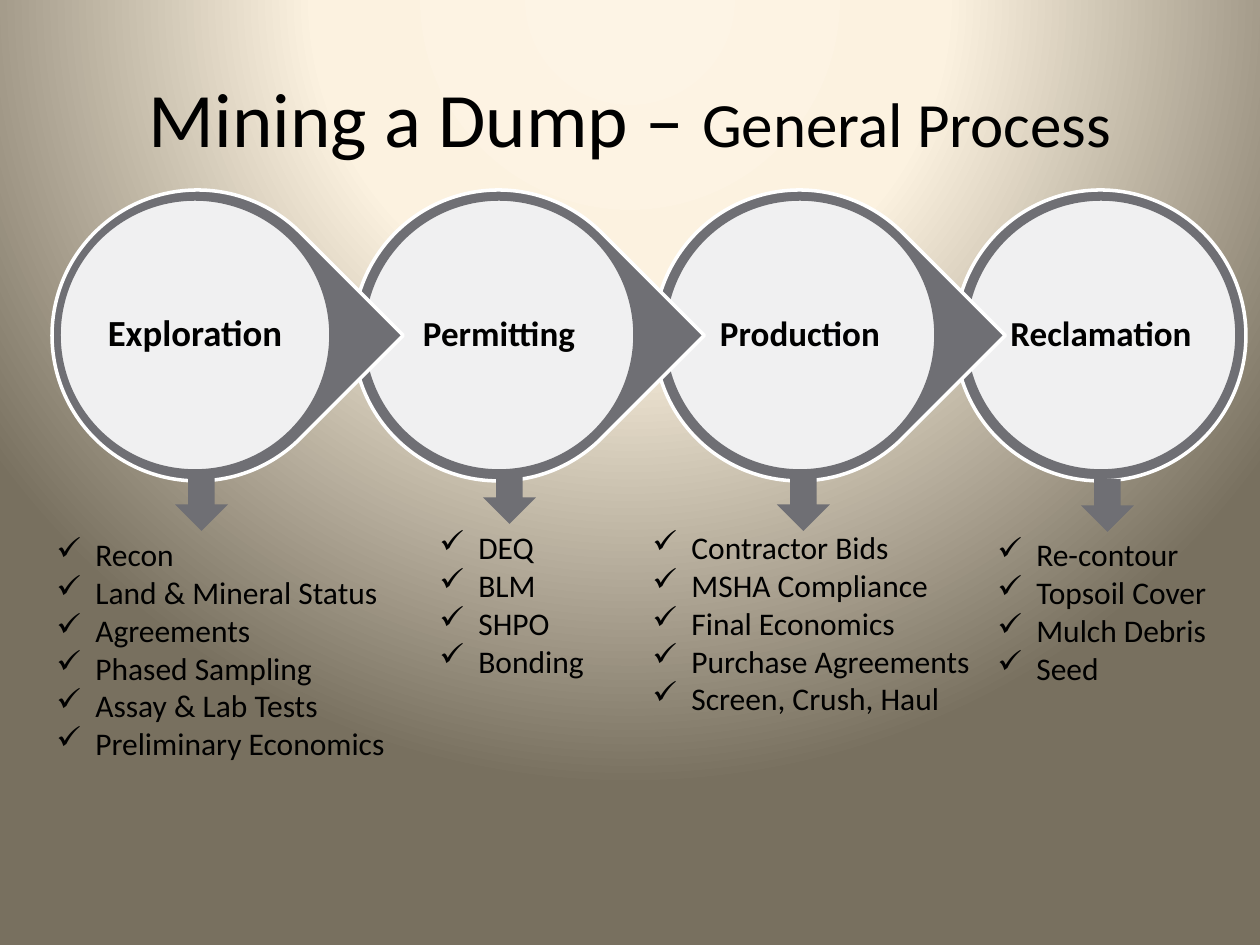
from lxml.etree import SubElement
from pptx import Presentation
from pptx.dml.color import RGBColor
from pptx.enum.shapes import MSO_SHAPE as Shape
from pptx.enum.text import MSO_ANCHOR as Anchor, PP_ALIGN as Align
from pptx.oxml.ns import qn
from pptx.util import Pt

TITLE = [("Mining a Dump – ", 44), ("General Process", 36)]
# face: left of the pale disc; arrow: left, top; notes: left, top, width, height
STAGES = [
    dict(name="Exploration", size=21, face=59, arrow=(175, 478), notes=(44, 529, 368, 318),
         steps=["Recon", "Land & Mineral Status", "Agreements", "Phased Sampling",
                "Assay & Lab Tests", "Preliminary Economics"]),
    dict(name="Permitting", size=20, face=363, arrow=(483, 471), notes=(427, 522, 262, 204),
         steps=["DEQ", "BLM", "SHPO", "Bonding"]),
    dict(name="Production", size=20, face=664, arrow=(777, 478), notes=(640, 522, 349, 204),
         steps=["Contractor Bids", "MSHA Compliance", "Final Economics",
                "Purchase Agreements", "Screen, Crush, Haul"]),
    dict(name="Reclamation", size=20, face=965, arrow=(1081, 479), notes=(985, 529, 262, 165),
         steps=["Re-contour", "Topsoil Cover", "Mulch Debris", "Seed"]),
]
GRAY, WHITE, BLACK = "6F6F74", "FFFFFF", "000000"
GLOW = [(0, "FDF4E5"), (40, "FCF2E0"), (100, "78705F")]
RING_LEFT, RING_TOP, RING, PITCH = 52, 190, 291, 301
FACE_TOP, FACE, LABEL = 199, 272, 194
ARROW = 53


def px(n):
    return round(n * 914400 / 126)


def color(hex_code):
    return RGBColor.from_string(hex_code)


def paint_glow(slide):
    """Radial background gradient centred above the top edge."""
    slide.background.fill.solid()
    bg = slide.element.find(".//" + qn("p:bgPr"))
    bg.remove(bg[0])
    grad = bg.makeelement(qn("a:gradFill"), {"rotWithShape": "1"})
    bg.insert(0, grad)
    stops = SubElement(grad, qn("a:gsLst"))
    for percent, hex_code in GLOW:
        stop = SubElement(stops, qn("a:gs"), pos=str(percent * 1000))
        SubElement(stop, qn("a:srgbClr"), val=hex_code)
    circle = SubElement(grad, qn("a:path"), {"path": "circle"})
    SubElement(circle, qn("a:fillToRect"), l="50000", t="-80000", r="50000", b="180000")


def add_shape(slide, kind, box, fill, line=None, opacity=None):
    shape = slide.shapes.add_shape(kind, *map(px, box))
    shape.shadow.inherit = False
    shape.fill.solid()
    shape.fill.fore_color.rgb = color(fill)
    if opacity:
        tint = shape.element.spPr.find(qn("a:solidFill"))[0]
        SubElement(tint, qn("a:alpha"), val=str(opacity * 1000))
    if line:
        shape.line.color.rgb = color(line)
        shape.line.width = Pt(2)
    else:
        shape.line.fill.background()
    return shape


def add_check(paragraph):
    props = paragraph._p.get_or_add_pPr()
    props.set("marL", str(px(39)))
    props.set("indent", str(px(-39)))
    SubElement(props, qn("a:buChar"), char="✓")


def add_text(slide, box, paragraphs, align=Align.LEFT, anchor=Anchor.TOP,
             bold=False, inset=None, spacing=None, checks=False):
    """Each paragraph is a list of (text, point size) runs."""
    frame = slide.shapes.add_textbox(*map(px, box)).text_frame
    frame.word_wrap = True
    frame.vertical_anchor = anchor
    if inset is not None:
        frame.margin_left = frame.margin_right = px(inset)
        frame.margin_top = frame.margin_bottom = px(inset)
    for i, runs in enumerate(paragraphs):
        paragraph = frame.add_paragraph() if i else frame.paragraphs[0]
        if checks:
            add_check(paragraph)
        paragraph.alignment = align
        if spacing:
            paragraph.line_spacing = spacing
        for text, size in runs:
            run = paragraph.add_run()
            run.text = text
            run.font.name = "Calibri"
            run.font.size = Pt(size)
            run.font.bold = bold
            run.font.color.rgb = color(BLACK)


def add_stage(slide, index, stage):
    last = index == len(STAGES) - 1
    ring_box = (RING_LEFT + index * PITCH, RING_TOP, RING, RING)
    ring = add_shape(slide, Shape.OVAL if last else Shape.TEAR, ring_box, GRAY, line=WHITE)
    if not last:
        ring.adjustments[0] = 1
        ring.rotation = 45
    face = stage["face"]
    add_shape(slide, Shape.OVAL, (face, FACE_TOP, FACE, FACE), WHITE, line=GRAY, opacity=90)
    margin = (FACE - LABEL) // 2
    add_text(slide, (face + margin, FACE_TOP + margin, LABEL, LABEL),
             [[(stage["name"], stage["size"])]], align=Align.CENTER,
             anchor=Anchor.MIDDLE, bold=True, inset=4, spacing=0.9)


def main():
    deck = Presentation()
    deck.slide_width, deck.slide_height = px(1260), px(945)
    slide = deck.slides.add_slide(deck.slide_layouts[6])
    paint_glow(slide)
    add_text(slide, (63, 38, 1134, 158), [TITLE], align=Align.CENTER, anchor=Anchor.MIDDLE)
    # Right to left, so that each point lies over the next ring
    for index, stage in reversed(list(enumerate(STAGES))):
        add_stage(slide, index, stage)
    for stage in STAGES:
        add_text(slide, stage["notes"], [[(step, 18)] for step in stage["steps"]], checks=True)
        add_shape(slide, Shape.DOWN_ARROW, (*stage["arrow"], ARROW, ARROW), GRAY)
    deck.save("out.pptx")


if __name__ == "__main__":
    main()
